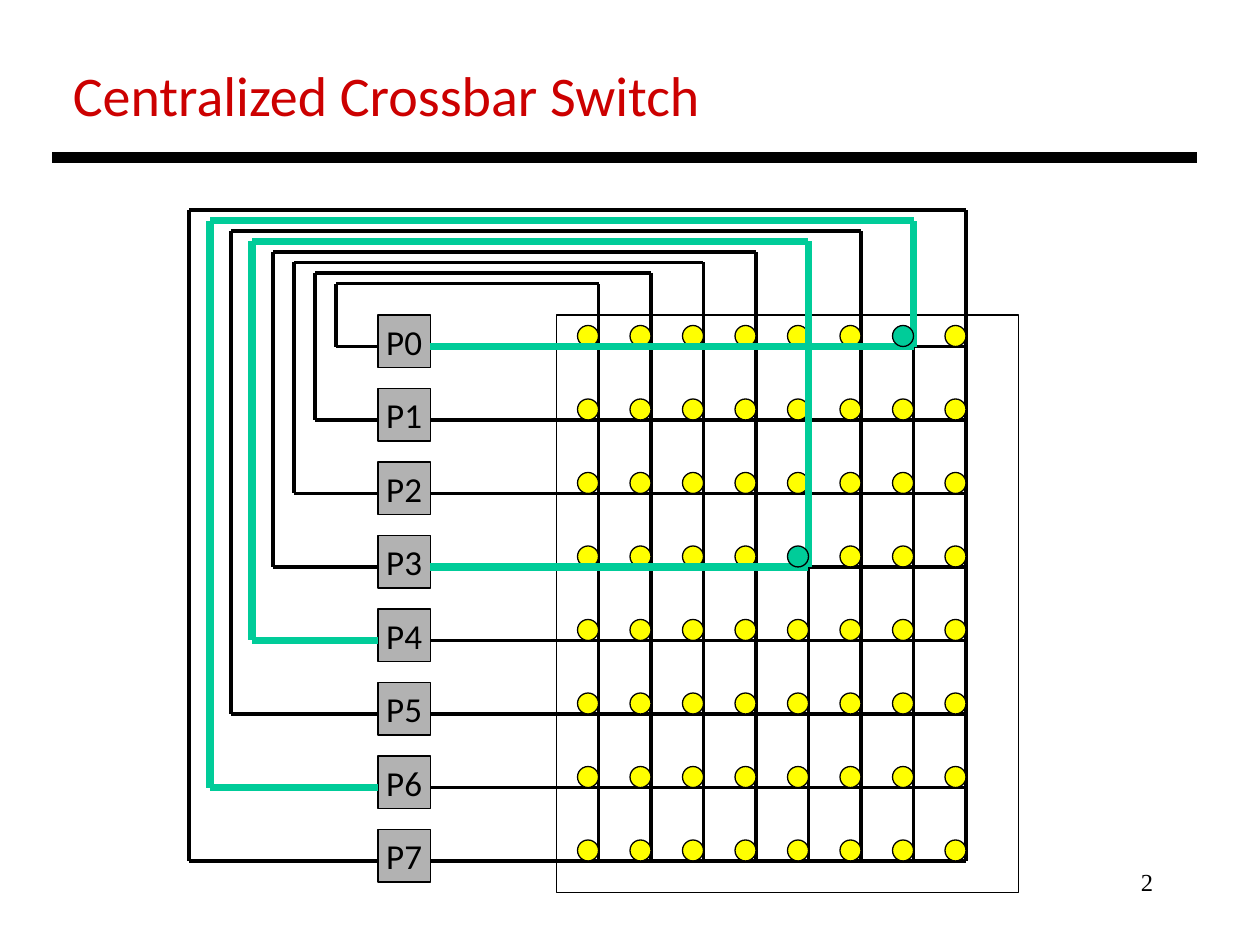
import pptx
import pptx.dml.color
import pptx.enum.shapes
import pptx.enum.text
import pptx.oxml
import pptx.util

SHAPE = pptx.enum.shapes.MSO_SHAPE
ALIGN = pptx.enum.text.PP_ALIGN
ANCHOR = pptx.enum.text.MSO_ANCHOR

# Content
TITLE = "Centralized Crossbar Switch"
PAGE_NUMBER = "2"
PROCESSORS = [f"P{number}" for number in range(8)]
ROUTES = [(0, 6), (3, 4)]  # (sending processor, receiving processor)

THEME = {
    "ink": "000000", "title": "CC0000", "paper": "FFFFFF", "processor": "B2B2B2",
    "open": "FFFF00", "active": "00CC99",
    "font": "Calibri", "number_font": "Times New Roman",
    "title_size": 32, "label_size": 20, "number_size": 14,
    "outline": 0.75, "wire": 2.25, "route": 4.5, "rule": 6,
}

# Layout on a grid of twelve steps to the inch
STEPS = 12
PROCESSOR_LEFT, PROCESSOR_SIZE = 36, 5
DOT_SIZE = 2
FRAME = (53, 30, 44, 55)
ROW_END, COLUMN_END = 92, 82

prs = pptx.Presentation()
prs.slide_width, prs.slide_height = pptx.util.Inches(10), pptx.util.Inches(7.5)
slide = prs.slides.add_slide(prs.slide_layouts[6])


def grid(*steps):
    return [pptx.util.Inches(step / STEPS) for step in steps]


def color(name):
    return pptx.dml.color.RGBColor.from_string(THEME[name])


def apply(target, values):
    for attribute, value in values.items():
        setattr(target, attribute, value)


def write(shape, text, size, font="font", ink="ink", align=ALIGN.LEFT, **frame_format):
    apply(shape.text_frame, frame_format)
    paragraph = shape.text_frame.paragraphs[0]
    paragraph.alignment = align
    run = paragraph.add_run()
    run.text = text
    apply(run.font, {"name": THEME[font], "size": pptx.util.Pt(THEME[size])})
    run.font.color.rgb = color(ink)


def draw_shape(kind, box, fill):
    shape = slide.shapes.add_shape(kind, *grid(*box))
    shape.shadow.inherit = False
    shape.fill.solid()
    shape.fill.fore_color.rgb = color(fill)
    shape.line.color.rgb = color("ink")
    shape.line.width = pptx.util.Pt(THEME["outline"])
    return shape


def draw_path(points, ink="ink", weight="wire"):
    for start, end in zip(points, points[1:]):
        line = slide.shapes.add_connector(
            pptx.enum.shapes.MSO_CONNECTOR.STRAIGHT, *grid(*start, *end))
        line.line.color.rgb = color(ink)
        line.line.width = pptx.util.Pt(THEME[weight])
        properties = line._element.spPr
        properties.append(properties.makeelement(pptx.oxml.ns.qn("a:effectLst"), {}))


def row_y(sender):
    return 33 + 7 * sender


def column_x(receiver):
    return 57 + 5 * receiver


def feedback(receiver):
    """Points from the top of a column round to its processor."""
    left, top = 32 - 2 * receiver, 27 - receiver
    return [(column_x(receiver), top), (left, top), (left, row_y(receiver)),
            (PROCESSOR_LEFT, row_y(receiver))]


def draw_dot(sender, receiver, fill):
    box = (column_x(receiver) - DOT_SIZE, row_y(sender) - DOT_SIZE, DOT_SIZE, DOT_SIZE)
    draw_shape(SHAPE.OVAL, box, fill)


# Page number, title and rule
number_box = slide.shapes.add_textbox(*grid(86, 82, 25, 6))
write(number_box, PAGE_NUMBER, "number_size", "number_font", align=ALIGN.RIGHT, word_wrap=True)
title_box = slide.shapes.add_textbox(*map(pptx.util.Inches, (0.48, 0.43, 5.23, 0.64)))
write(title_box, TITLE, "title_size", ink="title", word_wrap=False,
      auto_size=pptx.enum.text.MSO_AUTO_SIZE.SHAPE_TO_FIT_TEXT)
draw_path([(5, 15), (114, 15)], weight="rule")

# Processors and switch frame
for index, name in enumerate(PROCESSORS):
    box = (PROCESSOR_LEFT, row_y(index) - 3, PROCESSOR_SIZE, PROCESSOR_SIZE)
    write(draw_shape(SHAPE.RECTANGLE, box, "processor"), name, "label_size",
          align=ALIGN.CENTER, word_wrap=False, vertical_anchor=ANCHOR.MIDDLE)
draw_shape(SHAPE.RECTANGLE, FRAME, "paper")

# Wires: one row out of each processor, one column back to it
row_start = PROCESSOR_LEFT + PROCESSOR_SIZE
for index in range(len(PROCESSORS)):
    draw_path([(row_start, row_y(index)), (ROW_END, row_y(index))])
    draw_path([(column_x(index), COLUMN_END), *feedback(index)])

# Open crosspoints
for sender in range(len(PROCESSORS)):
    for receiver in range(len(PROCESSORS)):
        if (sender, receiver) not in ROUTES:
            draw_dot(sender, receiver, "open")

# Active routes with their closed crosspoints
for sender, receiver in ROUTES:
    y = row_y(sender)
    draw_path([(row_start, y), (column_x(receiver), y), *feedback(receiver)], "active", "route")
    draw_dot(sender, receiver, "active")

prs.save("out.pptx")
